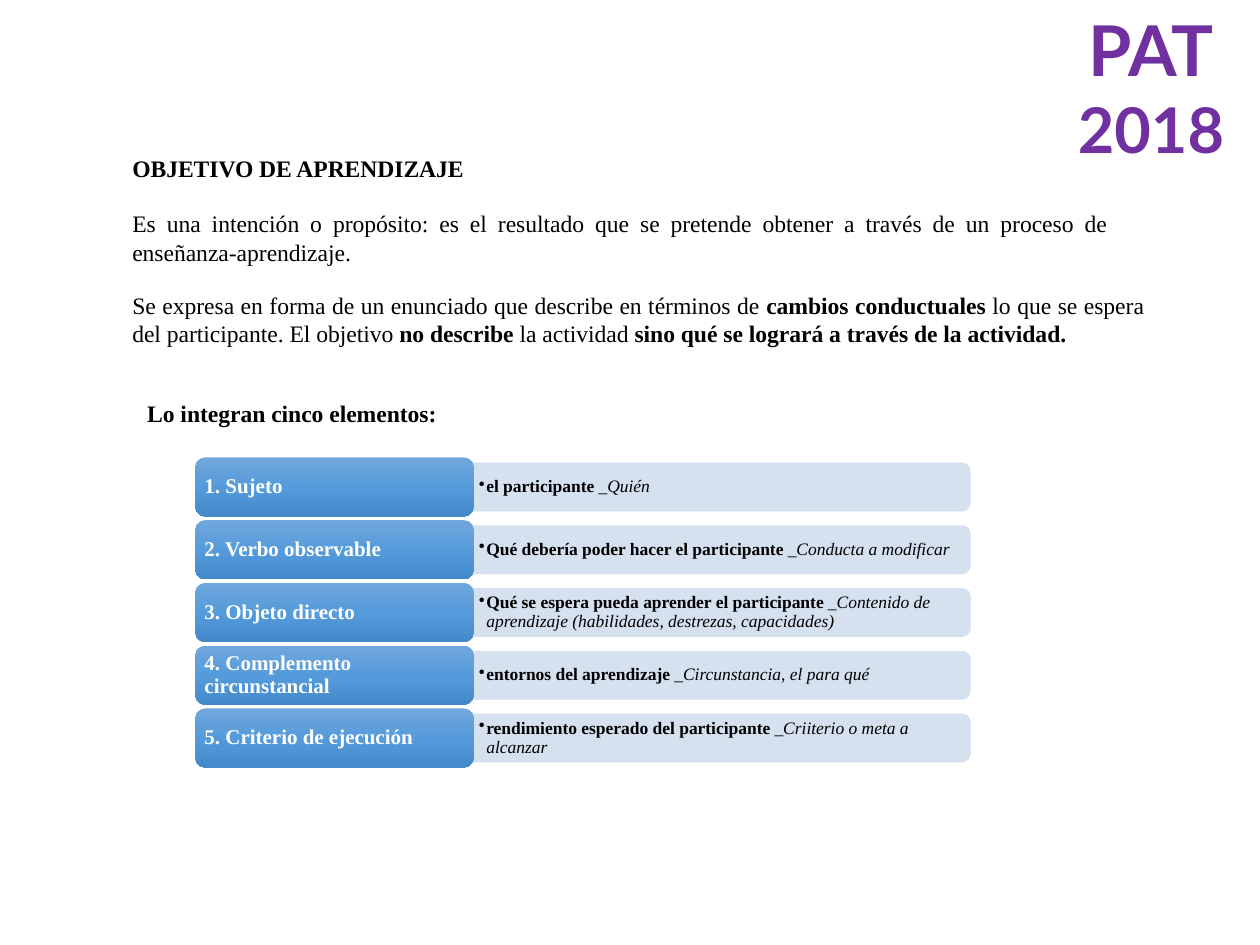
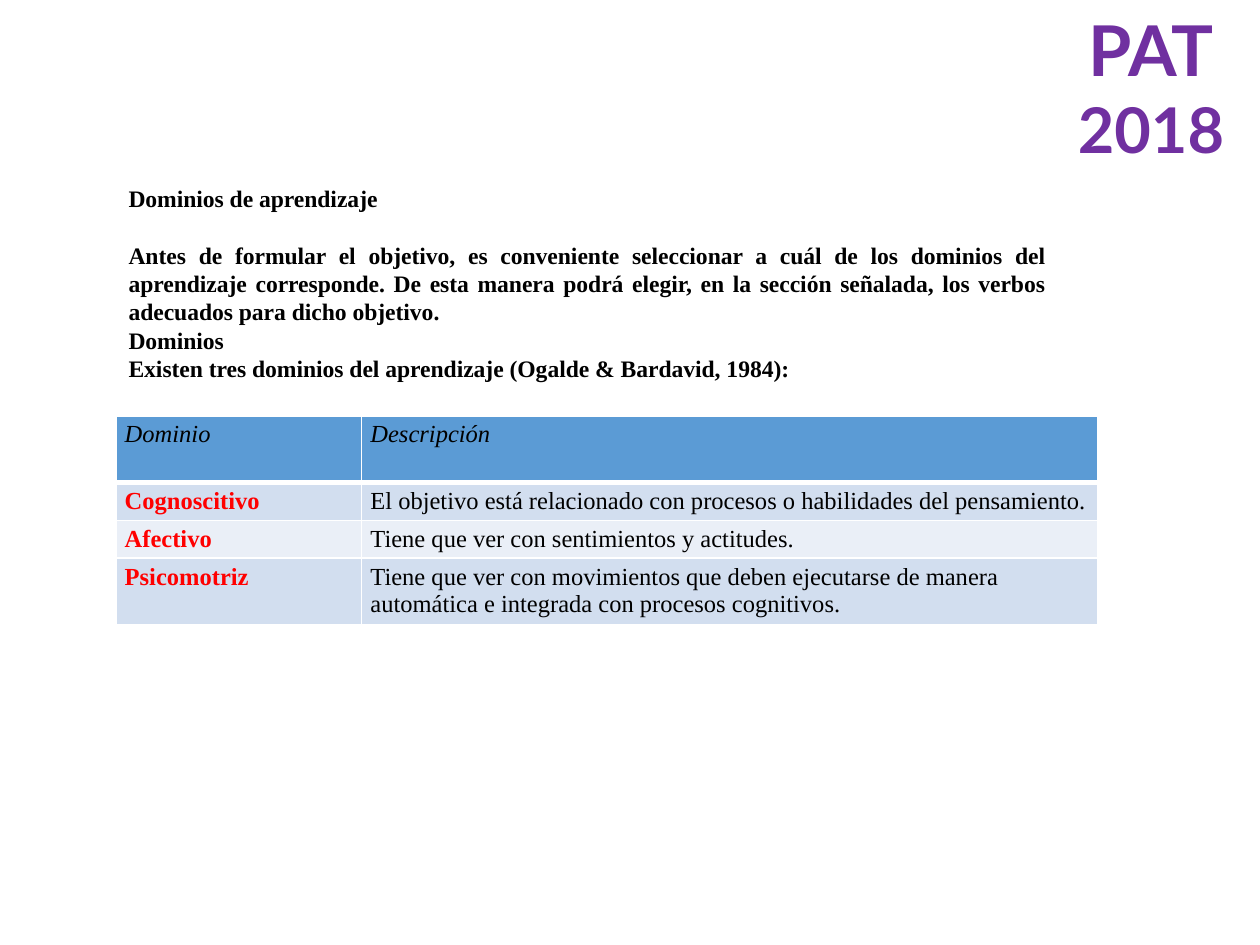
from dataclasses import dataclass

from lxml.etree import SubElement
from pptx import Presentation
from pptx.dml.color import RGBColor as Rgb
from pptx.enum.shapes import MSO_SHAPE as Geo
from pptx.enum.text import MSO_ANCHOR as Anchor, MSO_AUTO_SIZE as Fit, PP_ALIGN as Align
from pptx.oxml.ns import qn
from pptx.util import Inches, Pt

COLS, ROWS = 100, 75


@dataclass(frozen=True)
class Theme:
    serif: str = "Times New Roman"
    sans: str = "Lato"
    black: str = "000000"
    white: str = "FFFFFF"
    red: str = "FF0000"
    purple: str = "7030A0"
    blue: str = "5B9BD5"
    pale: str = "D2DEEF"
    faint: str = "EAEFF7"
    shade: tuple = ((0, "71A6DB"), (50, "559BDB"), (100, "448ACA"))
    text: float = 13.5
    cell: float = 14
    label: float = 12
    note: float = 10
    big: float = 40
    year: float = 36


THEME = Theme()
BOLD, ITAL = {"bold": True}, {"italic": True}

PARTS = [
    ("Sujeto", "el participante ", "_Quién"),
    ("Verbo observable", "Qué debería poder hacer el participante ",
     "_Conducta a modificar"),
    ("Objeto directo", "Qué se espera pueda aprender el participante ",
     "_Contenido de aprendizaje (habilidades, destrezas, capacidades)"),
    ("Complemento circunstancial", "entornos del aprendizaje ",
     "_Circunstancia, el para qué"),
    ("Criterio de ejecución", "rendimiento esperado del participante ",
     "_Criiterio o meta a alcanzar"),
]

DOMAINS = [
    ("Dominio", "Descripción"),
    ("Cognoscitivo",
     "El objetivo está relacionado con procesos o habilidades del pensamiento."),
    ("Afectivo", "Tiene que ver con sentimientos y actitudes."),
    ("Psicomotriz",
     "Tiene que ver con movimientos que deben ejecutarse de manera "
     "automática e integrada con procesos cognitivos."),
]


def assign(item, **values):
    for name, value in values.items():
        setattr(item, name, value)


def indent(par, left, first, char=None):
    """Set the left margin and first-line indent in inches, with or without a bullet."""
    props = par._p.get_or_add_pPr()
    props.set("marL", str(Inches(left)))
    props.set("indent", str(Inches(first)))
    if char:
        SubElement(props, qn("a:buChar"), char=char)
    else:
        SubElement(props, qn("a:buNone"))


class Deck:
    def __init__(self, theme):
        self.theme = theme
        self.prs = Presentation()
        assign(self.prs, slide_width=Inches(10), slide_height=Inches(7.5))
        self.slide = None

    def start(self, layout):
        self.slide = self.prs.slides.add_slide(self.prs.slide_layouts[layout])

    def area(self, x, y, w, h):
        """Turn grid columns and rows into slide lengths."""
        col, row = self.prs.slide_width / COLS, self.prs.slide_height / ROWS
        return [round(n) for n in (x * col, y * row, w * col, h * row)]

    def typeset(self, frame, paras, size, color=None, align=Align.LEFT,
                margin=(0.1, 0.05), anchor=Anchor.TOP, left=0, first=0,
                char=None, lead=1.0):
        """Fill a frame; each paragraph is a list of (text, font values)."""
        side, edge = map(Inches, margin)
        assign(frame, word_wrap=True, auto_size=Fit.NONE, vertical_anchor=anchor,
               margin_left=side, margin_right=side, margin_top=edge, margin_bottom=edge)
        for n, runs in enumerate(paras):
            par = frame.add_paragraph() if n else frame.paragraphs[0]
            indent(par, left, first, char)
            assign(par, alignment=align, line_spacing=lead, space_before=Pt(0))
            for text, look in runs:
                run = par.add_run()
                run.text = text
                base = {"name": self.theme.serif, "size": Pt(size),
                        "bold": False, "italic": False}
                assign(run.font, **{**base, **look})
                run.font.color.rgb = Rgb.from_string(color or self.theme.black)

    def fill(self, index, spot, paras, **look):
        """Move and fill one of the layout's placeholders."""
        holder = self.slide.placeholders[index]
        names = ("left", "top", "width", "height")
        assign(holder, **dict(zip(names, self.area(*spot))))
        self.typeset(holder.text_frame, paras, self.theme.text, **look)

    def title(self, text, x, y):
        self.fill(0, (x, y, 40, 3.3), [[(text, BOLD)]])

    def text(self, spot, paras, size, **look):
        box = self.slide.shapes.add_textbox(*self.area(*spot))
        self.typeset(box.text_frame, paras, size, **look)
        return box

    def badge(self):
        """Put the programme name on the master, for every slide."""
        look = {"name": self.theme.sans, "bold": True}
        runs = [("PAT", look), (" 2018", {**look, "size": Pt(self.theme.year)})]
        box = self.text((82.7, 0, 17.3, 13.8), [runs], self.theme.big,
                        color=self.theme.purple, align=Align.CENTER)
        self.prs.slide_master.shapes.element.append(box.element)

    def shape(self, kind, spot):
        item = self.slide.shapes.add_shape(kind, *self.area(*spot))
        item.shadow.inherit = False
        return item

    def label(self, spot, text):
        item = self.shape(Geo.ROUNDED_RECTANGLE, spot)
        item.line.fill.background()
        item.fill.gradient()
        item.fill.gradient_angle = 270
        stops = item.element.spPr.find(".//" + qn("a:gsLst"))
        for old in list(stops):
            stops.remove(old)
        for place, color in self.theme.shade:
            stop = SubElement(stops, qn("a:gs"), pos=str(place * 1000))
            SubElement(stop, qn("a:srgbClr"), val=color)
        self.typeset(item.text_frame, [[(text, BOLD)]], self.theme.label,
                     color=self.theme.white, margin=(0.05, 0.03),
                     anchor=Anchor.MIDDLE, lead=0.9)

    def panel(self, x, y, w, h):
        """Draw a pale bar whose right-hand corners are round."""
        turned = (x + (w - h) / 2, y + (h - w) / 2, h, w)
        bar = self.shape(Geo.ROUND_2_SAME_RECTANGLE, turned)
        bar.rotation = 90
        bar.fill.solid()
        bar.line.width = Pt(0.5)
        for paint in (bar.fill.fore_color, bar.line.color):
            paint.rgb = Rgb.from_string(self.theme.pale)
        for color in bar.element.spPr.iter(qn("a:srgbClr")):
            SubElement(color, qn("a:alpha"), val="90000")

    def border(self, cell, base):
        props = cell._tc.get_or_add_tcPr()
        for side, width in zip("LRTB", (1, 1, 1, base)):
            line = SubElement(props, qn("a:ln" + side), w=str(Pt(width)))
            paint = SubElement(line, qn("a:solidFill"))
            SubElement(paint, qn("a:srgbClr"), val=self.theme.white)

    def table(self, spot, rows, widths, heights):
        look = self.theme
        grid = self.slide.shapes.add_table(len(rows), len(widths), *self.area(*spot)).table
        for col, width in zip(grid.columns, widths):
            col.width = self.area(0, 0, width, 0)[2]
        for r, (row, height) in enumerate(zip(rows, heights)):
            grid.rows[r].height = self.area(0, 0, 0, height)[3]
            back = (look.faint if r % 2 == 0 else look.pale) if r else look.blue
            for c, text in enumerate(row):
                cell = grid.cell(r, c)
                key = r > 0 and c == 0
                self.border(cell, 1 if r else 3)
                cell.fill.solid()
                cell.fill.fore_color.rgb = Rgb.from_string(back)
                side, edge = Inches(0.07), Inches(0.04)
                assign(cell, margin_left=side, margin_right=side,
                       margin_top=edge, margin_bottom=edge)
                run = cell.text_frame.paragraphs[0].add_run()
                run.text = text
                assign(run.font, name=look.serif, size=Pt(look.cell),
                       bold=key, italic=r == 0)
                run.font.color.rgb = Rgb.from_string(look.red if key else look.black)


def goal(deck):
    deck.start(3)
    deck.title("OBJETIVO DE APRENDIZAJE", 9.5, 11.7)
    deck.fill(1, (9.5, 16.1, 79.4, 5.6), [[(
        "Es una intención o propósito: es el resultado que se pretende obtener "
        "a través de un proceso de enseñanza-aprendizaje.", {})]], align=Align.JUSTIFY)
    deck.fill(2, (9.5, 22.6, 82.3, 5.6), [[
        ("Se expresa en forma de un enunciado que describe en términos de ", {}),
        ("cambios conductuales ", BOLD),
        ("lo que se espera del participante. El objetivo ", {}),
        ("no describe ", BOLD),
        ("la actividad ", {}),
        ("sino qué se logrará a través de la actividad.", BOLD),
    ]], align=Align.JUSTIFY)
    deck.text((8.5, 32.1, 32, 2.4), [[("Lo integran cinco elementos:", BOLD)]],
              THEME.text, left=0.22, lead=Pt(9.7))
    for n, (name, what, kind) in enumerate(PARTS):
        top = 36.3 + n * 4.98
        deck.panel(37.6, top + 0.45, 39.4, 3.8)
        deck.text((37.6, top + 0.65, 39.2, 3.4), [[(what, BOLD), (kind, ITAL)]],
                  THEME.note, margin=(0.04, 0.02), anchor=Anchor.MIDDLE,
                  left=0.06, first=-0.06, char="•", lead=0.9)
        deck.label((15.5, top, 22.1, 4.7), f"{n + 1}. {name}")


def domains(deck):
    deck.start(1)
    deck.title("Dominios de aprendizaje", 9.2, 14.1)
    lines = [
        "Antes de formular el objetivo, es conveniente seleccionar a cuál de los "
        "dominios del aprendizaje corresponde. De esta manera podrá elegir, en la "
        "sección señalada, los verbos adecuados para dicho objetivo.",
        "Dominios",
        "Existen tres dominios del aprendizaje (Ogalde & Bardavid, 1984):",
    ]
    deck.fill(1, (9.2, 18.6, 74.8, 12.4), [[(line, BOLD)] for line in lines],
              align=Align.JUSTIFY)
    deck.table((9.2, 33, 77.9, 16.6), DOMAINS, (19.5, 58.4), (5.3, 3, 3, 5.3))


def main():
    deck = Deck(THEME)
    goal(deck)
    deck.badge()
    domains(deck)
    deck.prs.save("out.pptx")


if __name__ == "__main__":
    main()
